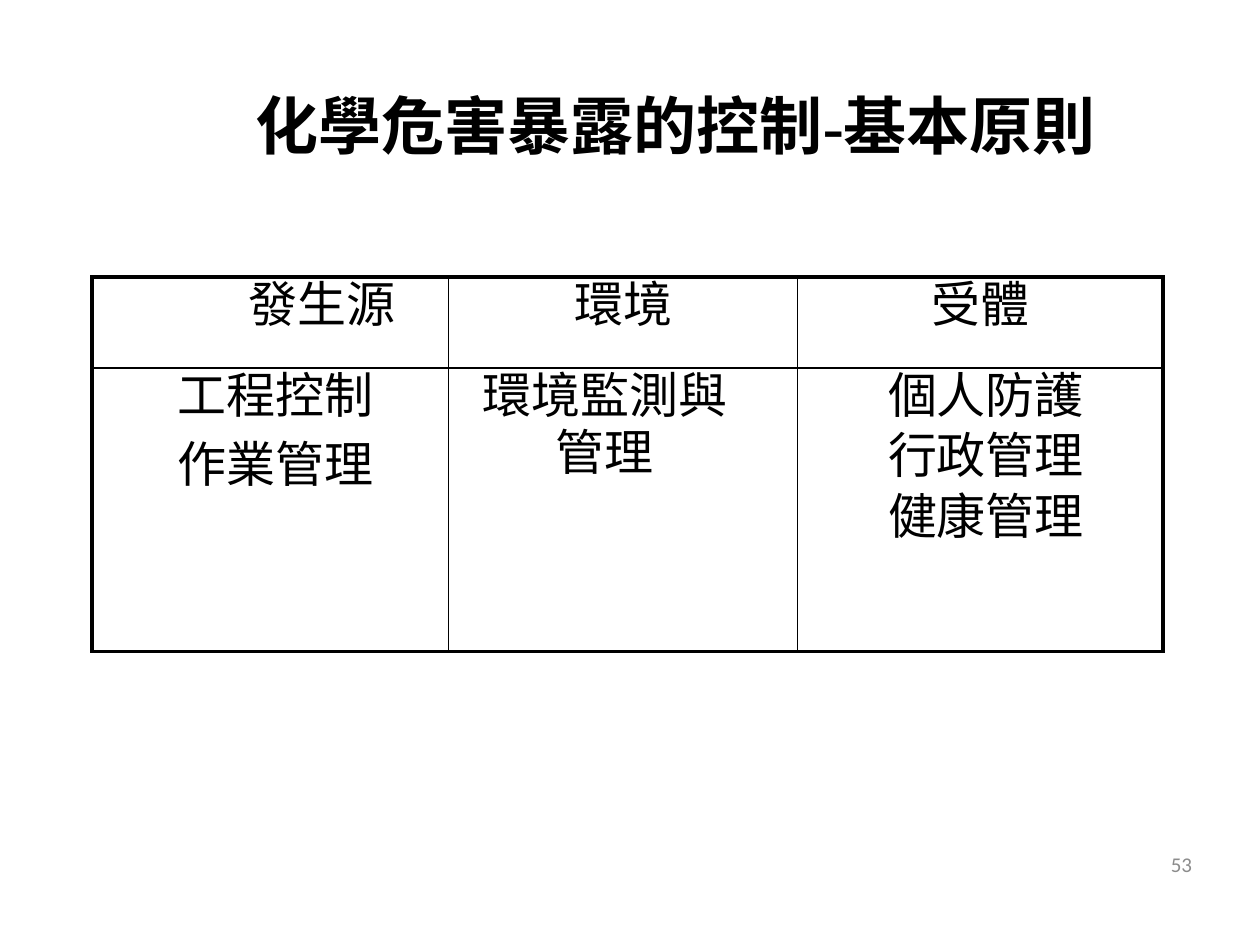
import pptx
import pptx.dml.color
import pptx.enum.text
import pptx.oxml.ns
import pptx.util
from lxml import etree

THEME = {
    "ink": "000000", "muted": "8C8C8C", "paper": "FFFFFF",
    "cjk": "Noto Sans CJK SC", "dash": "Times New Roman",
    "body": "Roboto", "number": "Calibri",
    "title_size": 36, "body_size": 28, "number_size": 12,
    "outer_line": 2.25, "inner_line": 1,
}
ALIGN = pptx.enum.text.PP_ALIGN
MIDDLE = pptx.enum.text.MSO_ANCHOR.MIDDLE
Inches, Pt = pptx.util.Inches, pptx.util.Pt
qn = pptx.oxml.ns.qn


def add_text(p, text, size, font, color="ink", bold=False, align=ALIGN.CENTER,
             before=0, left=0, right=0):
    """Append a run to paragraph p; indents in inches, space before in points."""
    p.alignment = align
    p.space_before = Pt(before)
    pPr = p._p.get_or_add_pPr()
    pPr.set("marL", str(Inches(left)))
    pPr.set("marR", str(Inches(right)))
    pPr.set("indent", "0")
    r = p.add_run()
    r.text = text
    r.font.size = Pt(THEME[size])
    r.font.name = THEME[font]
    r.font.bold = bold
    r.font.color.rgb = pptx.dml.color.RGBColor.from_string(THEME[color])
    etree.SubElement(r._r.get_or_add_rPr(), qn("a:ea"), typeface=THEME[font])


def set_border(cell, side, width):
    ln = etree.SubElement(cell._tc.get_or_add_tcPr(), qn(f"a:ln{side}"), w=str(Pt(width)))
    fill = etree.SubElement(ln, qn("a:solidFill"))
    etree.SubElement(fill, qn("a:srgbClr"), val=THEME["ink"])


prs = pptx.Presentation()
prs.slide_width, prs.slide_height = Inches(10), Inches(7.5)
s = prs.slides.add_slide(prs.slide_layouts[6])
s.background.fill.solid()
s.background.fill.fore_color.rgb = pptx.dml.color.RGBColor.from_string(THEME["paper"])

# Title
tf = s.shapes.add_textbox(Inches(1.06), Inches(0.3), Inches(8.44), Inches(1.25)).text_frame
tf.word_wrap = True
tf.vertical_anchor = MIDDLE
tf.margin_left = tf.margin_right = tf.margin_bottom = 0
tf.margin_top = Inches(0.12)
for text, font, bold in (("化學危害暴露的控制", "cjk", True), ("-", "dash", True),
                         ("基本原則", "cjk", True)):
    add_text(tf.paragraphs[0], text, "title_size", font, bold=bold, left=0.17)

# Control table: each cell holds its lines and their paragraph format
columns, rows = (2.83, 2.77, 2.9), (0.72, 2.25)
cells = (
    ((("發生源",), {"left": 0.82}),
     (("環境",), {}),
     (("受體",), {"left": 0.01})),
    ((("工程控制", "作業管理"), {"left": 0.08, "gap": 6.7}),
     (("環境監測與管理",), {"left": 0.09, "right": 0.38}),
     (("個人防護", "行政管理", "健康管理"), {"left": 0.09})),
)
row_before = (1.4, 1.9)
table = s.shapes.add_table(len(rows), len(columns), Inches(0.73), Inches(2.2),
                           Inches(sum(columns)), Inches(sum(rows))).table
table.first_row = table.horz_banding = False
for column, width in zip(table.columns, columns):
    column.width = Inches(width)
for row, height in zip(table.rows, rows):
    row.height = Inches(height)

for i, row in enumerate(cells):
    for j, (lines, fmt) in enumerate(row):
        cell = table.cell(i, j)
        cell.margin_left = cell.margin_right = cell.margin_top = cell.margin_bottom = 0
        outer = {"L": j == 0, "R": j == len(columns) - 1,
                 "T": i == 0, "B": i == len(rows) - 1}
        for side, is_outer in outer.items():
            set_border(cell, side, THEME["outer_line" if is_outer else "inner_line"])
        cell.fill.background()
        for n, line in enumerate(lines):
            p = cell.text_frame.paragraphs[0] if n == 0 else cell.text_frame.add_paragraph()
            before = fmt.get("gap", row_before[i]) if n else row_before[i]
            add_text(p, line, "body_size", "body", before=before,
                     left=fmt.get("left", 0), right=fmt.get("right", 0))

# Slide number
tf = s.shapes.add_textbox(Inches(7.23), Inches(6.66), Inches(2.33), Inches(0.4)).text_frame
tf.word_wrap = True
tf.vertical_anchor = MIDDLE
add_text(tf.paragraphs[0], "53", "number_size", "number", color="muted", align=ALIGN.RIGHT)

prs.save("out.pptx")
